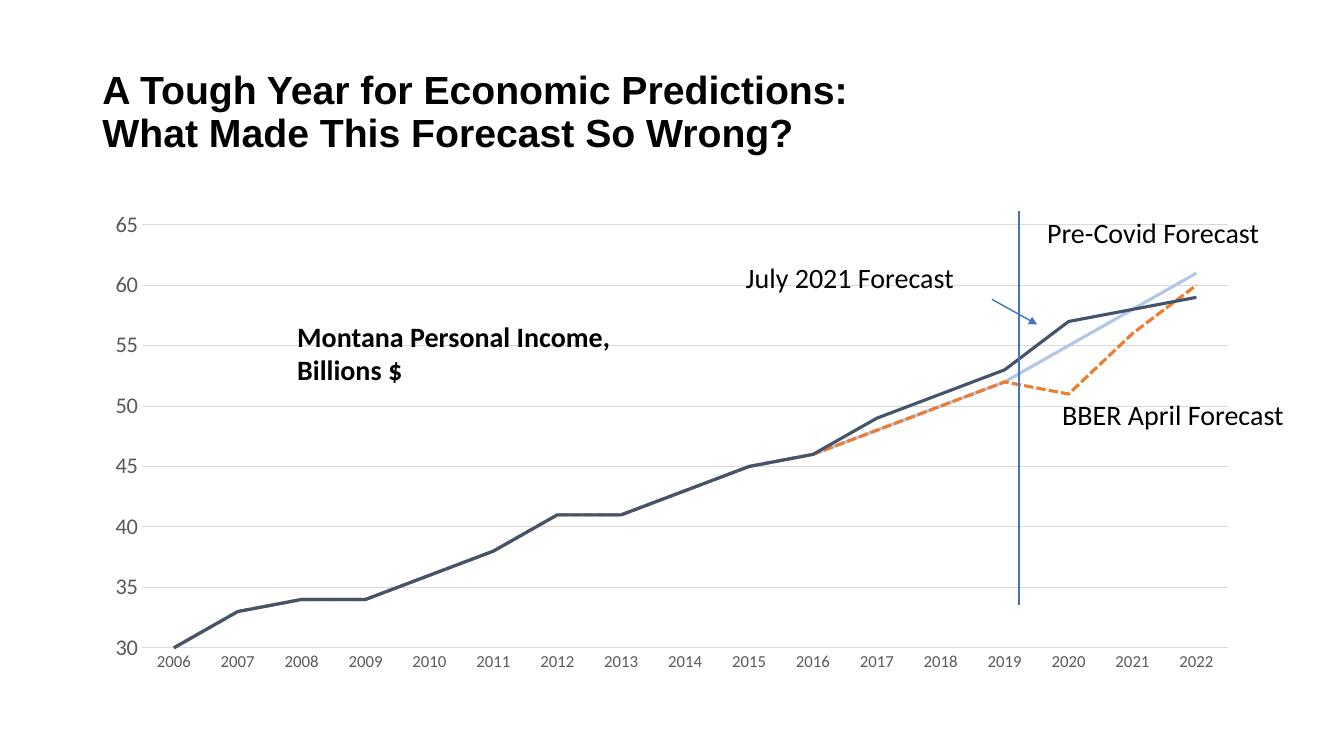
from lxml import etree
from pptx import Presentation
from pptx.chart.data import CategoryChartData
from pptx.dml.color import RGBColor
from pptx.enum import chart as charts, dml, shapes, text
from pptx.oxml import ns
from pptx.util import Pt

BLACK = RGBColor(0x00, 0x00, 0x00)
GRAY = RGBColor(0x59, 0x59, 0x59)
GRID = RGBColor(0xD9, 0xD9, 0xD9)
BLUE = RGBColor(0x44, 0x72, 0xC4)
PALE_BLUE = RGBColor(0xB4, 0xC7, 0xE7)
ORANGE = RGBColor(0xED, 0x7D, 0x31)
SLATE = RGBColor(0x44, 0x54, 0x6A)

TITLE = "A Tough Year for Economic Predictions:\nWhat Made This Forecast So Wrong?"
TITLE_BOX = (66, 28.8, 828, 104.4)
CHART_BOX = (66, 144, 828, 342.7)
YEARS = [str(year) for year in range(2006, 2023)]
SHARED_INCOME = [30, 33, 34, 34, 36, 38, 41, 41, 43, 45, 46]  # 2006 to 2016
FORECASTS = [  # name, values from 2017, colour, dash
    ("Series 1", [48, 50, 52, 55, 58, 61], PALE_BLUE, None),
    ("Series 2", [48, 50, 52, 51, 56, 60], ORANGE, dml.MSO_LINE.SQUARE_DOT),
    ("Series 3", [49, 51, 53, 57, 58, 59], SLATE, None),
]
LABELS = [  # text, box, bold
    ("Montana Personal Income, Billions $", (205.2, 224.6, 275, 55.4), True),
    ("Pre-Covid Forecast", (740.9, 150.5, 219, 31.5), False),
    ("BBER April Forecast", (751.7, 280.1, 208.3, 31.5), False),
    ("July 2021 Forecast", (525.6, 182.2, 208.8, 31.5), False),
]
LINES = [  # from, to, arrowhead
    ((727.9, 150.5), (727.9, 432), False),
    ((708.5, 213.8), (740.9, 231.8), True),
]


def points(values):
    return [Pt(value) for value in values]


def format_font(font, size, color, name="Calibri", bold=False):
    font.size, font.name, font.bold = Pt(size), name, bold
    font.color.rgb = color


def write(frame, words, size=20, color=BLACK, name="Calibri", bold=False,
          anchor=text.MSO_ANCHOR.TOP, spacing=1.0):
    frame.word_wrap = True
    frame.vertical_anchor = anchor
    paragraph = frame.paragraphs[0]
    paragraph.text = words
    paragraph.alignment = text.PP_ALIGN.LEFT
    paragraph.line_spacing = spacing
    for run in paragraph.runs:
        format_font(run.font, size, color, name, bold)


def add_line(slide, start, end, arrowhead):
    connector = slide.shapes.add_connector(
        shapes.MSO_CONNECTOR.STRAIGHT, *points(start + end))
    connector.line.color.rgb = BLUE
    connector.line.width = Pt(1)
    if arrowhead:
        etree.SubElement(connector.line._get_or_add_ln(), ns.qn("a:tailEnd"), type="triangle")
    etree.SubElement(connector._element.spPr, ns.qn("a:effectLst"))


def add_income_chart(slide):
    data = CategoryChartData()
    data.categories = YEARS
    for name, values, _, _ in FORECASTS:
        data.add_series(name, SHARED_INCOME + values)
    chart = slide.shapes.add_chart(charts.XL_CHART_TYPE.LINE, *points(CHART_BOX), data).chart
    chart.has_title = chart.has_legend = False
    format_font(chart.font, 10, BLACK)
    chart.plots[0].vary_by_categories = False

    for axis, size in ((chart.category_axis, 12), (chart.value_axis, 16)):
        axis.major_tick_mark = axis.minor_tick_mark = charts.XL_TICK_MARK.NONE
        format_font(axis.tick_labels.font, size, GRAY)
    income_axis = chart.value_axis
    income_axis.minimum_scale, income_axis.maximum_scale = 30, 65
    income_axis.major_unit = 5
    income_axis.format.line.fill.background()
    for line in (chart.category_axis.format.line, income_axis.major_gridlines.format.line):
        line.color.rgb = GRID
        line.width = Pt(0.75)

    for series, (_, _, color, dash) in zip(chart.plots[0].series, FORECASTS):
        series.smooth = False
        series.format.line.color.rgb = color
        series.format.line.width = Pt(2.25)
        if dash:
            series.format.line.dash_style = dash


def main():
    presentation = Presentation()
    presentation.slide_width, presentation.slide_height = Pt(960), Pt(540)
    slide = presentation.slides.add_slide(presentation.slide_layouts[5])
    title = slide.shapes.title
    title.left, title.top, title.width, title.height = points(TITLE_BOX)
    write(title.text_frame, TITLE, size=28, name="Arial", bold=True,
          anchor=text.MSO_ANCHOR.MIDDLE, spacing=0.9)
    add_income_chart(slide)
    for words, box, bold in LABELS:
        write(slide.shapes.add_textbox(*points(box)).text_frame, words, bold=bold)
    for start, end, arrowhead in LINES:
        add_line(slide, start, end, arrowhead)
    presentation.save("out.pptx")


if __name__ == "__main__":
    main()
